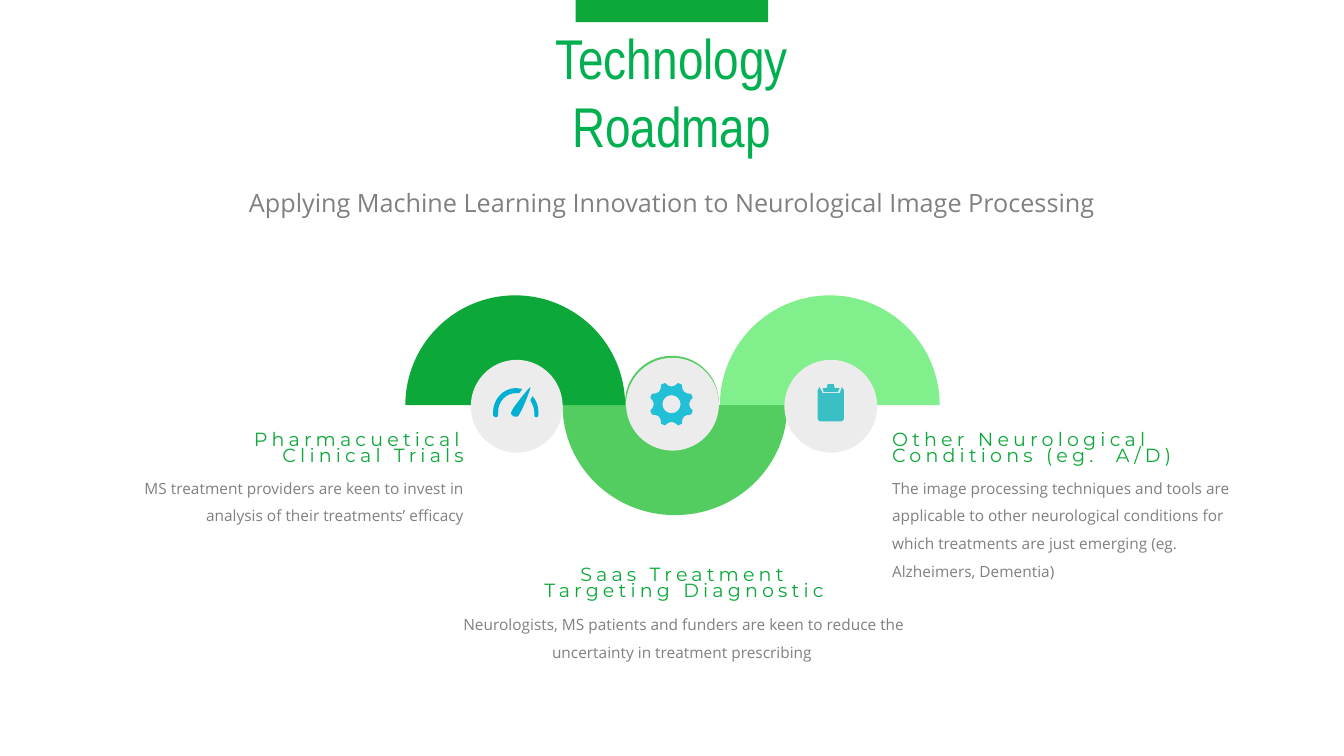
"""Build the Technology Roadmap slide with three linked half discs."""
from math import cos, radians, sin, tan

from lxml.etree import SubElement
from pptx import Presentation
from pptx.dml.color import RGBColor
from pptx.enum.shapes import MSO_SHAPE as Shape
from pptx.enum.text import MSO_ANCHOR as Anchor, PP_ALIGN as Align
from pptx.oxml.ns import qn
from pptx.util import Pt

PX = 9144
COLORS = {
    "dark": "0CA839", "middle": "53CD5F", "light": "58EA66", "disc": "ECECEC",
    "gear": "21C0D7", "gauge": "00B0D3", "clipboard": "3ABFC4",
    "title": "00B050", "gray": "808080",
}


def quarter_arcs(center_x, center_y, radius_x, radius_y, start, count):
    """Return the Bezier points of clockwise quarter arcs."""
    pull = 4 / 3 * tan(radians(22.5))
    points = []
    for i in range(count):
        a, b = radians(start + 90 * i), radians(start + 90 * (i + 1))
        units = [(cos(a), sin(a)), (cos(a) - pull * sin(a), sin(a) + pull * cos(a)),
                 (cos(b) + pull * sin(b), sin(b) - pull * cos(b)), (cos(b), sin(b))]
        points += [(center_x + radius_x * x, center_y + radius_y * y)
                   for x, y in units[min(i, 1):]]
    return points


def add_outline(contours, color, curved=True):
    """Draw closed contours as one filled shape, with each point triple as a curve."""
    contours = [[(round(x * PX), round(y * PX)) for x, y in points] for points in contours]
    builder = slide.shapes.build_freeform(*contours[0][0])
    builder.add_line_segments(contours[0][1:], close=True)
    for points in contours[1:]:
        builder.move_to(*points[0])
        builder.add_line_segments(points[1:], close=True)
    shape = builder.convert_to_shape()
    shape.shadow.inherit = False
    shape.fill.solid()
    shape.fill.fore_color.rgb = RGBColor.from_string(COLORS[color])
    shape.line.fill.background()
    if curved:
        lines = list(shape._element.iter(qn("a:lnTo")))
        for first, second, third in zip(lines[::3], lines[1::3], lines[2::3]):
            first.tag = qn("a:cubicBezTo")
            for line in (second, third):
                first.append(line[0])
                line.getparent().remove(line)
    return shape


presentation = Presentation()
presentation.slide_width = 1333 * PX
presentation.slide_height = 750 * PX
slide = presentation.slides.add_slide(presentation.slide_layouts[6])

for left, width, start, color in [
    (558, 223, 0, "middle"), (402, 218, 180, "dark"), (714, 218, 180, "light"),
]:
    points = quarter_arcs(left + width / 2, 402, width / 2, 109, start, 2)
    half_disc = add_outline([points], color)
    if color == "light":
        tint = half_disc._element.spPr.find(qn("a:solidFill"))[0]
        SubElement(tint, qn("a:alpha"), val="75000")

for preset, left, top, width, height, color in [
    (Shape.OVAL, 620, 353, 93, 92, "middle"),
    (Shape.OVAL, 621, 355, 92, 92, "disc"),
    (Shape.OVAL, 467, 357, 91, 92, "disc"),
    (Shape.OVAL, 778, 357, 92, 92, "disc"),
    (Shape.RECTANGLE, 571, 0, 191, 22, "dark"),
]:
    shape = slide.shapes.add_shape(preset, left * PX, top * PX, width * PX, height * PX)
    shape.shadow.inherit = False
    shape.fill.solid()
    shape.fill.fore_color.rgb = RGBColor.from_string(COLORS[color])
    shape.line.fill.background()

TOOTH = [(6.5, 17.6), (14, 19.5), (17, 22), (20, 22), (25, 22), (28, 22),
         (31, 19.5), (38.5, 17.6), (45, 17.5)]
gear_polar = [(0, 17.5)]
for notch_angle in range(0, 360, 45):
    gear_polar += [(notch_angle + offset, radius) for offset, radius in TOOTH]
gear_rim = [(666 + radius * cos(radians(angle)), 401 + radius * sin(radians(angle)))
            for angle, radius in gear_polar]
gear_hole = quarter_arcs(666, 401, 9, 9, 0, 4)[::-1]
add_outline([gear_rim, gear_hole], "gear")

right_band = [(528, 393), (527, 394), (527, 396), (526, 397), (528, 401), (530, 405),
              (530, 409), (530, 410), (530, 411), (530, 412), (530, 413), (530, 414),
              (532, 414), (533, 414), (534, 413), (534, 412), (534, 411), (534, 410),
              (534, 409), (534, 403), (532, 397), (528, 393)]
left_band = [(512, 390), (513, 390), (514, 390), (515, 390), (516, 389), (517, 387),
             (518, 386), (516, 386), (514, 385), (512, 385), (499, 385), (489, 396),
             (489, 409), (489, 410), (489, 411), (489, 412), (489, 413), (491, 414),
             (492, 414), (493, 414), (494, 413), (494, 412), (494, 411), (494, 410),
             (494, 409), (494, 398), (502, 390), (512, 390)]
needle = [(508, 407), (506, 410), (507, 412), (509, 413), (511, 414), (514, 414),
          (515, 411), (517, 409), (527, 385), (526, 384), (525, 384), (509, 404),
          (508, 407)]
add_outline([right_band, left_band, needle], "gauge")

board = [(835, 384), (833, 390), (816, 390), (813, 384), (811, 387), (811, 416),
         (813, 418), (835, 418), (837, 416), (837, 387)]
clip = [(831, 389), (833, 385), (828, 385), (827, 381), (821, 381), (820, 385),
        (816, 385), (817, 389)]
for points in (board, clip):
    add_outline([points], "clipboard", curved=False)

STYLES = {
    "title": ("Arial Narrow", 40, "title", 1.0),
    "subtitle": ("Open Sans", 18, "gray", 1.0),
    "heading": ("Montserrat", 13.6, "dark", 0.7),
    "body": ("Open Sans", 11, "gray", 1.5),
}
TEXTS = [
    ("subtitle", 223, 181, 887, 40, Align.CENTER,
     "Applying Machine Learning Innovation to Neurological Image Processing"),
    ("heading", 167, 425, 303, 45, Align.RIGHT, "Pharmacuetical Clinical Trials"),
    ("body", 127, 461, 343, 147, Align.RIGHT,
     "MS treatment providers are keen to invest in analysis of their treatments’ efficacy"),
    ("heading", 875, 425, 303, 45, Align.LEFT, "Other Neurological Conditions (eg.  A/D)"),
    ("body", 875, 461, 376, 147, Align.LEFT,
     "The image processing techniques and tools are applicable to other neurological "
     "conditions for which treatments are just emerging (eg.  Alzheimers, Dementia)"),
    ("heading", 527, 559, 303, 45, Align.CENTER, "Saas Treatment Targeting Diagnostic"),
    ("body", 442, 596, 473, 66, Align.CENTER,
     "Neurologists, MS patients and funders are keen to reduce the uncertainty in "
     "treatment prescribing "),
    ("title", 442, 85, 448, 77, Align.CENTER, "Technology Roadmap"),
]
for style, left, top, width, height, alignment, text in TEXTS:
    font_name, size, color, line_spacing = STYLES[style]
    text_box = slide.shapes.add_textbox(left * PX, top * PX, width * PX, height * PX)
    text_frame = text_box.text_frame
    text_frame.word_wrap = True
    text_frame.vertical_anchor = Anchor.BOTTOM if style == "title" else Anchor.TOP
    text_frame.text = text
    paragraph = text_frame.paragraphs[0]
    paragraph.alignment = alignment
    paragraph.line_spacing = line_spacing
    run = paragraph.runs[0]
    run.font.name = font_name
    run.font.size = Pt(size)
    run.font.color.rgb = RGBColor.from_string(COLORS[color])
    if style == "heading":
        run.font._element.set("spc", "300")

presentation.save("out.pptx")
